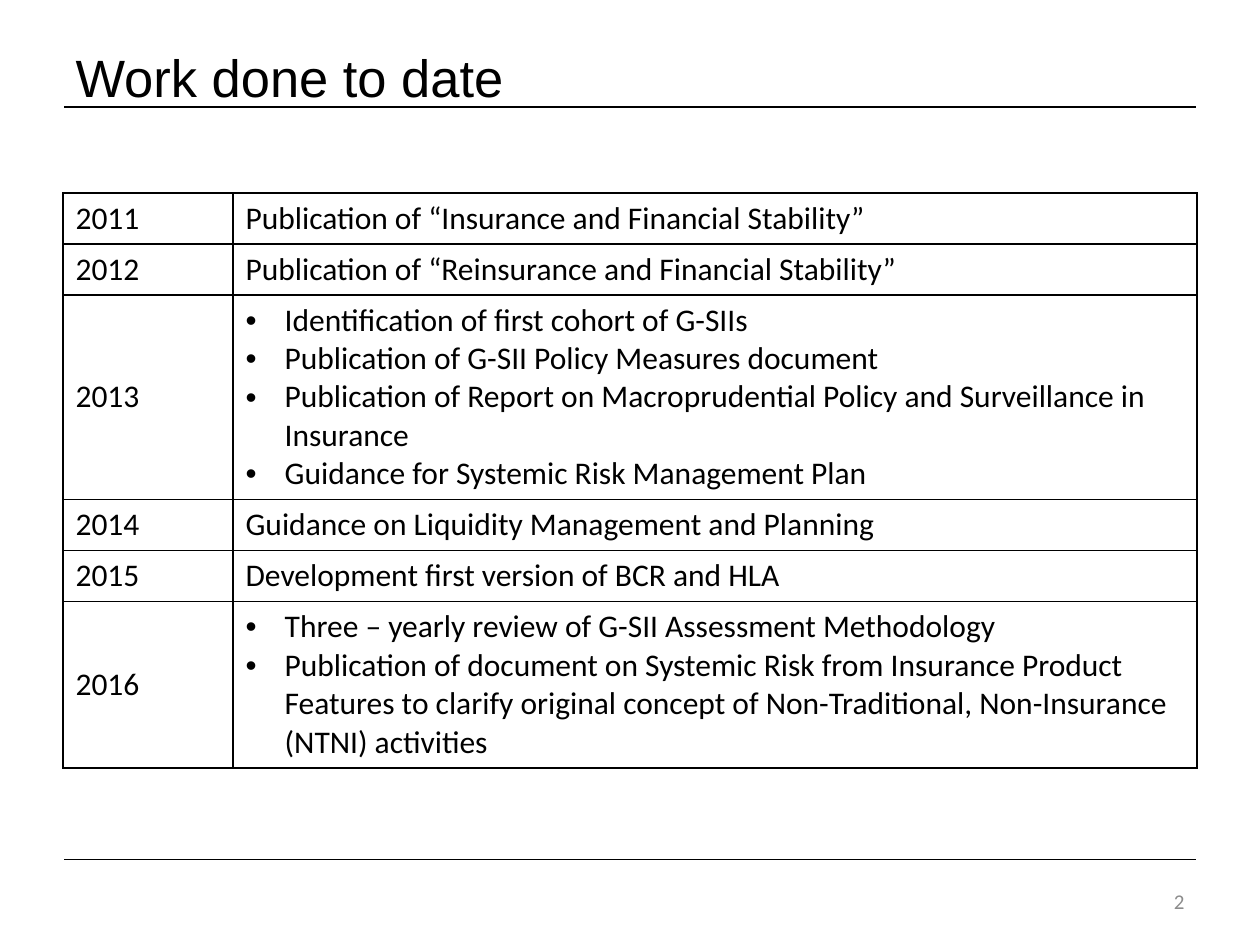
from lxml.etree import SubElement
from pptx import Presentation
from pptx.dml.color import RGBColor
from pptx.enum.text import MSO_ANCHOR, MSO_AUTO_SIZE, PP_ALIGN
from pptx.oxml.ns import qn
from pptx.util import Inches, Pt

COLORS = {"text": "000000", "rule": "000000", "page_number": "8C8C8C"}
WIDTH, HEIGHT = 10, 7.5
MARGIN = 0.05 * WIDTH
CONTENT_WIDTH = WIDTH - 2 * MARGIN
YEAR_SHARE = 0.15
CELL_PADDING, LINE_HEIGHT = 0.1, 0.305
BULLET_INDENT = Inches(0.31)

# Year, entries (several entries become bullets), text lines in the row
MILESTONES = [
    ("2011", ["Publication of “Insurance and Financial Stability”"], 1),
    ("2012", ["Publication of “Reinsurance and Financial Stability”"], 1),
    ("2013", [
        "Identification of first cohort of G-SIIs",
        "Publication of G-SII Policy Measures document",
        "Publication of Report on Macroprudential Policy and Surveillance in Insurance",
        "Guidance for Systemic Risk Management Plan",
    ], 5),
    ("2014", ["Guidance on Liquidity Management and Planning"], 1),
    ("2015", ["Development first version of BCR and HLA"], 1),
    ("2016", [
        "Three – yearly review of G-SII Assessment Methodology",
        "Publication of document on Systemic Risk from Insurance Product Features "
        "to clarify original concept of Non-Traditional, Non-Insurance (NTNI) activities",
    ], 4),
]


def color(name):
    return RGBColor.from_string(COLORS[name])


def add_run(paragraph, text, size, font="Calibri", color_name="text"):
    run = paragraph.add_run()
    run.text = text
    run.font.name = font
    run.font.size = Pt(size)
    run.font.color.rgb = color(color_name)


def add_rule(slide, left, top, width):
    rule = slide.shapes.add_connector(
        1, Inches(left), Inches(top), Inches(left + width), Inches(top))
    rule.line.color.rgb = color("rule")
    rule.line.width = Pt(0.75)
    SubElement(rule._element.spPr, qn("a:effectLst"))


def fill_title(slide, left, top, width, height):
    title = slide.shapes.title
    title.left, title.top = Inches(left), Inches(top)
    title.width, title.height = Inches(width), Inches(height)
    frame = title.text_frame
    frame.auto_size = MSO_AUTO_SIZE.NONE
    frame.vertical_anchor = MSO_ANCHOR.MIDDLE
    paragraph = frame.paragraphs[0]
    paragraph.alignment = PP_ALIGN.LEFT
    add_run(paragraph, "Work done to date", 30, "Arial")


def add_page_number(slide, left, top, width, height):
    box = slide.shapes.add_textbox(
        Inches(left), Inches(top), Inches(width), Inches(height))
    frame = box.text_frame
    frame.word_wrap = True
    frame.vertical_anchor = MSO_ANCHOR.MIDDLE
    paragraph = frame.paragraphs[0]
    paragraph.alignment = PP_ALIGN.RIGHT
    add_run(paragraph, "2", 12, color_name="page_number")


def add_bullet(paragraph):
    properties = paragraph._p.get_or_add_pPr()
    properties.set("marL", str(BULLET_INDENT))
    properties.set("indent", str(-BULLET_INDENT))
    SubElement(properties, qn("a:buFont"), typeface="Arial")
    SubElement(properties, qn("a:buChar"), char="•")


def add_borders(cell):
    properties = cell._tc.get_or_add_tcPr()
    for side in ("lnL", "lnR", "lnT", "lnB"):
        line = SubElement(properties, qn(f"a:{side}"), w=str(Pt(1)))
        fill = SubElement(line, qn("a:solidFill"))
        SubElement(fill, qn("a:srgbClr"), val=COLORS["rule"])


def fill_cell(cell, entries, anchor):
    add_borders(cell)
    cell.fill.background()
    cell.vertical_anchor = anchor
    frame = cell.text_frame
    for index, entry in enumerate(entries):
        paragraph = frame.add_paragraph() if index else frame.paragraphs[0]
        if len(entries) > 1:
            add_bullet(paragraph)
        add_run(paragraph, entry, 18)


def add_milestone_table(slide, left, top, width):
    heights = [CELL_PADDING + LINE_HEIGHT * lines for _, _, lines in MILESTONES]
    table = slide.shapes.add_table(
        len(MILESTONES), 2, Inches(left), Inches(top),
        Inches(width), Inches(sum(heights))).table
    table.first_row = table.horz_banding = False
    for column, share in zip(table.columns, (YEAR_SHARE, 1 - YEAR_SHARE)):
        column.width = Inches(width * share)
    for row, height, (year, entries, _) in zip(table.rows, heights, MILESTONES):
        row.height = Inches(height)
        fill_cell(row.cells[0], [year], MSO_ANCHOR.MIDDLE)
        fill_cell(row.cells[1], entries, MSO_ANCHOR.TOP)


def main():
    presentation = Presentation()
    presentation.slide_width, presentation.slide_height = Inches(WIDTH), Inches(HEIGHT)
    slide = presentation.slides.add_slide(presentation.slide_layouts[5])
    for top in (0.85, 6.82):
        add_rule(slide, MARGIN + 0.01, top, CONTENT_WIDTH - 0.02)
    fill_title(slide, MARGIN, 0.04 * HEIGHT, CONTENT_WIDTH, 0.61)
    add_page_number(slide, 7.17, 6.95, WIDTH - MARGIN - 7.17, 0.4)
    add_milestone_table(slide, MARGIN, 1.53, CONTENT_WIDTH)
    presentation.save("out.pptx")


if __name__ == "__main__":
    main()
